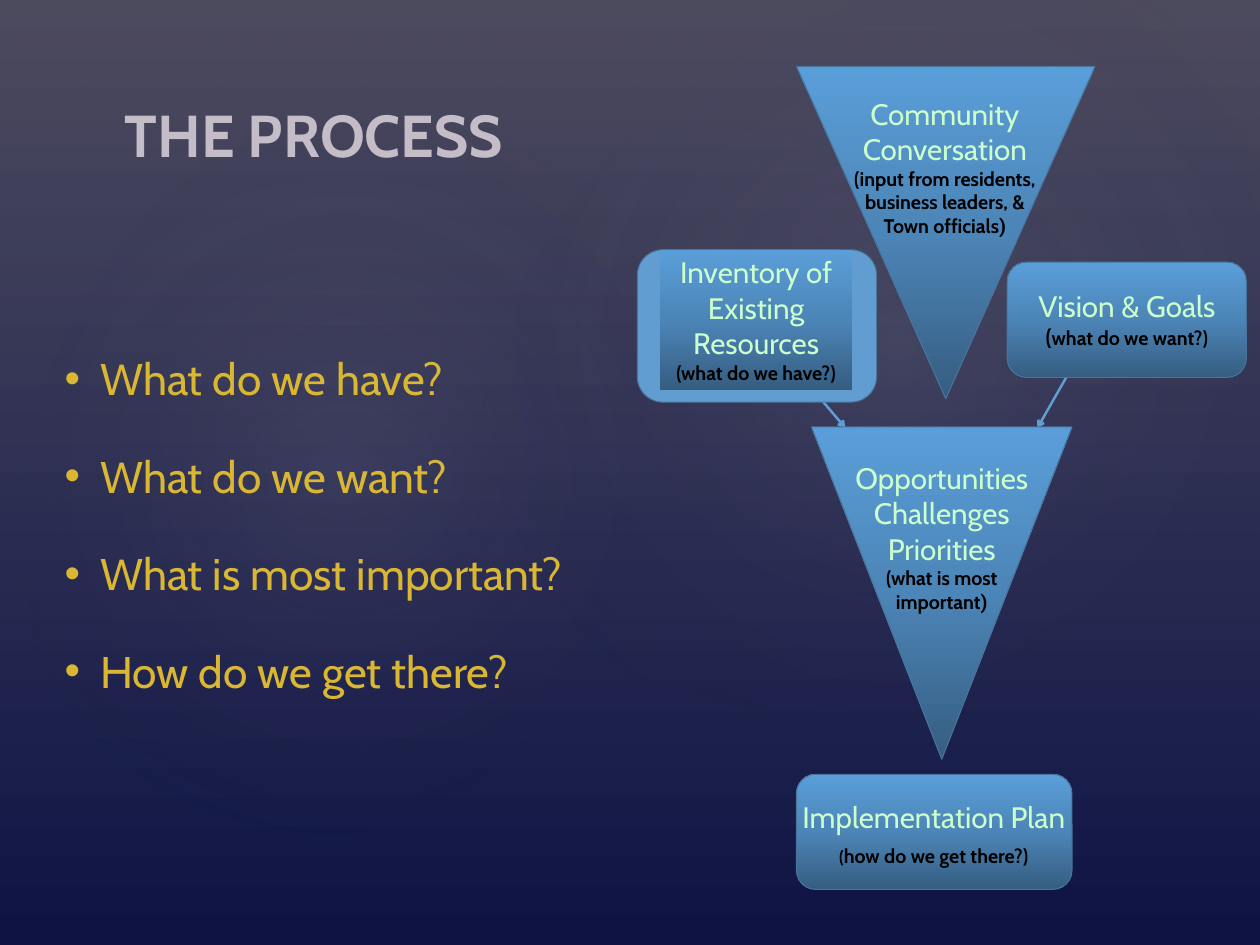
from collections import namedtuple
from dataclasses import dataclass

from lxml import etree
from pptx import Presentation
from pptx.dml.color import RGBColor
from pptx.enum import shapes, text
from pptx.oxml import ns
from pptx.util import Pt

Box = namedtuple("Box", "left top width height")


@dataclass(frozen=True)
class Theme:
    font: str = "Cabin"
    bracket_font: str = "Roboto"
    title: str = "C4BCC6"
    bullet: str = "D9B732"
    heading: str = "CCFFCC"
    note: str = "000000"
    accent: str = "629DD1"
    outline: str = "49749B"
    title_size: int = 48
    bullet_size: int = 36
    heading_size: int = 24
    note_size: int = 16
    background: tuple = ((0, "4B4D65", 100), (100, "0C1143", 100))
    veil: tuple = ((0, "504652", 36), (100, "242852", 10))
    glow: tuple = ((0, "C4BCC6", 8), (58, "242852", 0))
    panel: tuple = ((0, "355D81", 100), (50, "4C85B7", 100), (100, "5A9ED9", 100))


THEME = Theme()
HEADING = dict(size=THEME.heading_size, color=THEME.heading)
NOTE = dict(size=THEME.note_size, color=THEME.note, bold=True)
BRACKET = dict(NOTE, name=THEME.bracket_font)


def set_format(target, **values):
    for name, value in values.items():
        setattr(target, name, value)


def style_font(font, size, color, name=THEME.font, bold=False):
    set_format(font, size=Pt(size), name=name, bold=bold)
    font.color.rgb = RGBColor.from_string(color)


def add_element(parent, tag, **attributes):
    return etree.SubElement(parent, ns.qn(tag), attributes)


def within(box, left, top, width, height):
    """Turn a place relative to box into a place on the slide."""
    return Box(box.left + left, box.top + top, width, height)


def in_points(box):
    return [Pt(length) for length in box]


def fill_gradient(owner, fill, stops, angle=None):
    """Fill with (position, colour, opacity) stops; radial when angle is None."""
    fill.gradient()
    gradient = next(owner.iter(ns.qn("a:gradFill")))
    for child in list(gradient):
        gradient.remove(child)
    stop_list = add_element(gradient, "a:gsLst")
    for position, color, opacity in stops:
        stop = add_element(stop_list, "a:gs", pos=str(position * 1000))
        color_element = add_element(stop, "a:srgbClr", val=color)
        if opacity < 100:
            add_element(color_element, "a:alpha", val=str(opacity * 1000))
    if angle is None:
        circle = add_element(gradient, "a:path", path="circle")
        add_element(circle, "a:fillToRect", **dict.fromkeys("ltrb", "50000"))
    else:
        add_element(gradient, "a:lin", ang=str(angle * 60000), scaled="0")


def add_shape(slide, kind, box, fill, angle=None, rotation=0, outline=None):
    shape = slide.shapes.add_shape(kind, *in_points(box))
    shape.shadow.inherit = False
    shape.rotation = rotation
    if isinstance(fill, str):
        shape.fill.solid()
        shape.fill.fore_color.rgb = RGBColor.from_string(fill)
    else:
        fill_gradient(shape.element, shape.fill, fill, angle)
    if outline:
        shape.line.width = Pt(0.85)
        shape.line.color.rgb = RGBColor.from_string(outline)
    else:
        shape.line.fill.background()
    return shape


def add_text_box(slide, box):
    return slide.shapes.add_textbox(*in_points(box))


def write_label(shape, heading, note_runs, gap=0, anchor=text.MSO_ANCHOR.TOP):
    """Write a heading and, gap points below it, a note made of (text, style) runs."""
    frame = shape.text_frame
    set_format(frame, word_wrap=True, vertical_anchor=anchor)
    note = frame.add_paragraph()
    note.space_before = Pt(gap)
    for paragraph, runs in ((frame.paragraphs[0], [(heading, HEADING)]), (note, note_runs)):
        paragraph.alignment = text.PP_ALIGN.CENTER
        for words, style in runs:
            for index, line in enumerate(words.split("\n")):
                if index:
                    paragraph.add_line_break()
                run = paragraph.add_run()
                run.text = line
                style_font(run.font, **style)


def add_arrow(slide, box, start, end):
    points = [Pt(value) for x, y in (start, end) for value in (box.left + x, box.top + y)]
    arrow = slide.shapes.add_connector(shapes.MSO_CONNECTOR.STRAIGHT, *points)
    arrow.line.width = Pt(2)
    arrow.line.color.rgb = RGBColor.from_string(THEME.accent)
    add_element(arrow.line._get_or_add_ln(), "a:tailEnd", type="arrow")
    add_element(arrow.element.spPr, "a:effectLst")


def draw_backdrop(slide, box):
    fill_gradient(slide.element, slide.background.fill, THEME.background, 90)
    add_shape(slide, shapes.MSO_SHAPE.RECTANGLE, box, THEME.veil, 90)
    for glow, rotation in (((-31, 130.3, 620, 502), 294.3), ((367.2, 13, 725.8, 532.8), 328.7)):
        add_shape(slide, shapes.MSO_SHAPE.OVAL, within(box, *glow), THEME.glow, rotation=rotation)


def place_title(slide, box, words):
    title = slide.shapes.title
    set_format(title, **dict(zip(Box._fields, in_points(box))))
    frame = title.text_frame
    set_format(frame, word_wrap=True, vertical_anchor=text.MSO_ANCHOR.BOTTOM,
               auto_size=text.MSO_AUTO_SIZE.NONE, margin_left=Pt(10), margin_right=Pt(10),
               margin_top=Pt(5), margin_bottom=Pt(5))
    frame.text = words
    paragraph = frame.paragraphs[0]
    paragraph.alignment = text.PP_ALIGN.CENTER
    style_font(paragraph.runs[0].font, THEME.title_size, THEME.title, bold=True)


def list_questions(slide, box, questions):
    frame = add_text_box(slide, box).text_frame
    set_format(frame, word_wrap=True, vertical_anchor=text.MSO_ANCHOR.MIDDLE,
               margin_left=Pt(10), margin_right=Pt(10), margin_top=Pt(5), margin_bottom=Pt(37))
    for index, question in enumerate(questions):
        paragraph = frame.add_paragraph() if index else frame.paragraphs[0]
        paragraph.space_before = Pt(36 if index else 0)
        properties = paragraph._p.get_or_add_pPr()
        properties.set("marL", str(Pt(31)))
        properties.set("indent", str(-Pt(28.8)))
        bullet_color = add_element(properties, "a:buClr")
        add_element(bullet_color, "a:srgbClr", val=THEME.bullet)
        add_element(properties, "a:buFont", typeface="Arial")
        add_element(properties, "a:buChar", char="•")
        run = paragraph.add_run()
        run.text = question
        style_font(run.font, THEME.bullet_size, THEME.bullet)


def draw_process(slide, box):
    def panel(kind, place, fill=THEME.panel, angle=270, **options):
        return add_shape(slide, kind, within(box, *place), fill, angle, **options)

    def funnel(place):
        panel(shapes.MSO_SHAPE.ISOSCELES_TRIANGLE, place, angle=90, rotation=180, outline=THEME.outline)

    def card(place, fill=THEME.panel):
        panel(shapes.MSO_SHAPE.ROUNDED_RECTANGLE, place, fill, outline=THEME.outline)

    def label(place, *content, **options):
        write_label(add_text_box(slide, within(box, *place)), *content, **options)

    add_arrow(slide, box, (129.3, 247), (169, 293.8))
    add_arrow(slide, box, (351.8, 247), (325.1, 293.8))

    funnel((129.3, 0, 242.6, 270))
    label((166, 20.2, 167.8, 123.8), "Community Conversation",
          [("(input from residents, business leaders, & Town officials", NOTE), (")", BRACKET)])

    card((300.6, 159.1, 194.4, 93.6))
    label((300.6, 176.4, 194.4, 58.3), "Vision & Goals",
          [("(", dict(NOTE, size=18)), ("what do we want?)", NOTE)])

    card((0, 149, 194.4, 123.8), THEME.accent)
    inventory = panel(shapes.MSO_SHAPE.RECTANGLE, (18.4, 149, 156.2, 113.8))
    write_label(inventory, "Inventory of Existing Resources", [("(what do we have?)", NOTE)])

    funnel((141.5, 293, 211.7, 270))
    label((150.2, 316.1, 194.4, 133.2), "Opportunities Challenges\nPriorities",
          [("(what is most\nimportant", NOTE), (")", BRACKET)])

    card((129.3, 575.3, 223.9, 93.6))
    label((119.9, 591.8, 241.9, 65.5), "Implementation Plan",
          [("(", dict(NOTE, size=14)), ("how do we get there?)", NOTE)], gap=8)


def main():
    presentation = Presentation()
    set_format(presentation, slide_width=Pt(1024), slide_height=Pt(768))
    slide = presentation.slides.add_slide(presentation.slide_layouts.get_by_name("Title Only"))
    draw_backdrop(slide, Box(0, 0, 1024, 768))
    place_title(slide, Box(20, 40.3, 470, 102.3), "THE PROCESS")
    list_questions(slide, Box(40.3, 184.3, 491.8, 515.5),
                   ["What do we have?", "What do we want?", "What is most important?", "How do we get there?"])
    draw_process(slide, Box(518, 54, 495, 669))
    # The title placeholder is moved in front of the backdrop.
    slide.shapes._spTree.insert(5, slide.shapes.title.element)
    presentation.save("out.pptx")


if __name__ == "__main__":
    main()
